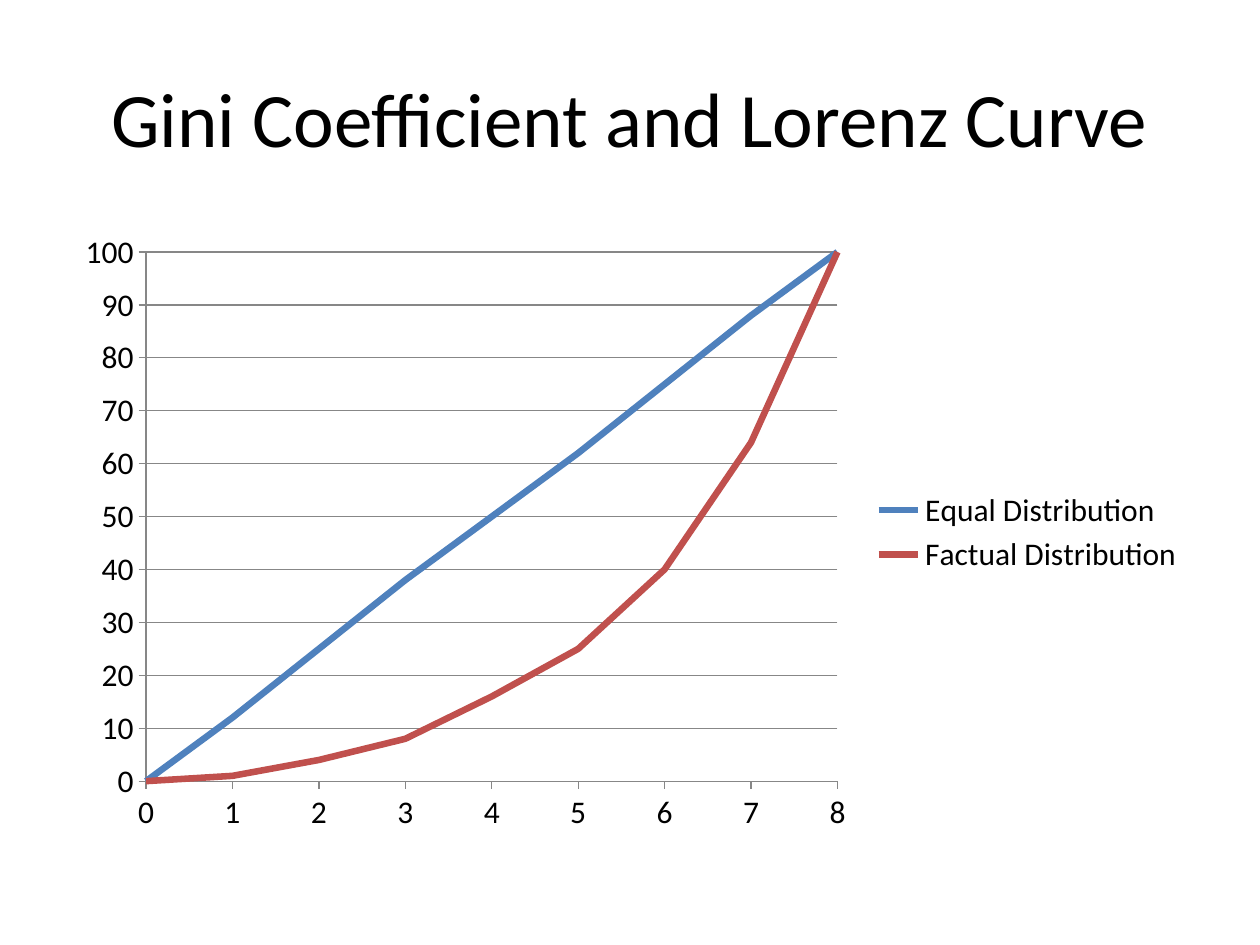
from dataclasses import dataclass

from lxml import etree
from pptx import Presentation
from pptx.chart.data import CategoryChartData
from pptx.dml.color import RGBColor
from pptx.enum.chart import XL_CHART_TYPE, XL_LEGEND_POSITION, XL_TICK_MARK
from pptx.enum.text import MSO_ANCHOR, PP_ALIGN
from pptx.oxml.ns import qn
from pptx.util import Pt

LINE = XL_CHART_TYPE.LINE
RIGHT = XL_LEGEND_POSITION.RIGHT
OUT, NONE = XL_TICK_MARK.OUTSIDE, XL_TICK_MARK.NONE
MIDDLE = MSO_ANCHOR.MIDDLE
CENTER = PP_ALIGN.CENTER


@dataclass(frozen=True)
class Theme:
    face: str = "Calibri"
    ink: str = "000000"
    grid: str = "878787"
    blue: str = "4F81BD"
    red: str = "C0504D"
    head: float = 44
    text: float = 18
    thin: float = 0.75
    thick: float = 3.75


THEME = Theme()

# Wealth shares in percent, by step of the population
STEPS = range(9)
EQUAL = [round(100 * step / 8) for step in STEPS]
REAL = [0, 1, 4, 8, 16, 25, 40, 64, 100]
CURVES = [
    ("Equal Distribution", EQUAL, THEME.blue),
    ("Factual Distribution", REAL, THEME.red),
]


def apply(item, form):
    for name, value in form.items():
        setattr(item, name, value)


def style_font(font, size):
    apply(font, {"name": THEME.face, "size": Pt(size), "bold": False})
    font.color.rgb = RGBColor.from_string(THEME.ink)


def style_line(line, color, width):
    line.color.rgb = RGBColor.from_string(color)
    line.width = Pt(width)


def add_title(slide, text):
    title = slide.shapes.title
    apply(title, {"left": Pt(36), "top": Pt(21.6),
                  "width": Pt(648), "height": Pt(90)})
    frame = title.text_frame
    apply(frame, {"text": text, "vertical_anchor": MIDDLE, "word_wrap": True})
    para = frame.paragraphs[0]
    para.alignment = CENTER
    style_font(para.runs[0].font, THEME.head)


def style_axes(chart):
    ticks = {"major_tick_mark": OUT, "minor_tick_mark": NONE}
    for axis in (chart.category_axis, chart.value_axis):
        apply(axis, ticks)
        style_line(axis.format.line, THEME.grid, THEME.thin)
        style_font(axis.tick_labels.font, THEME.text)

    # Start the curves on the value axis itself
    axis = chart.value_axis
    node = axis._element
    cross = node.find(qn("c:crossBetween"))
    if cross is None:
        cross = etree.Element(qn("c:crossBetween"))
        node.find(qn("c:crosses")).addnext(cross)
    cross.set("val", "midCat")

    apply(axis, {"minimum_scale": 0, "maximum_scale": 100,
                 "major_unit": 10, "has_major_gridlines": True})
    style_line(axis.major_gridlines.format.line, THEME.grid, THEME.thin)


def add_chart(slide):
    data = CategoryChartData(number_format="General")
    data.categories = STEPS
    for name, values, _ in CURVES:
        data.add_series(name, values)
    chart = slide.shapes.add_chart(
        LINE, Pt(36), Pt(126), Pt(648), Pt(356.4), data).chart
    apply(chart, {"has_title": False, "has_legend": True})
    style_font(chart.font, THEME.text)
    style_axes(chart)

    # Curves
    plot = chart.plots[0]
    plot.vary_by_categories = False
    for curve, (_, _, color) in zip(plot.series, CURVES):
        curve.smooth = False
        style_line(curve.format.line, color, THEME.thick)

    # Legend
    legend = chart.legend
    apply(legend, {"position": RIGHT, "include_in_layout": False})
    style_font(legend.font, THEME.text)


def main():
    deck = Presentation()
    apply(deck, {"slide_width": Pt(720), "slide_height": Pt(540)})
    slide = deck.slides.add_slide(deck.slide_layouts[5])
    add_title(slide, "Gini Coefficient and Lorenz Curve")
    add_chart(slide)
    deck.save("out.pptx")


if __name__ == "__main__":
    main()
